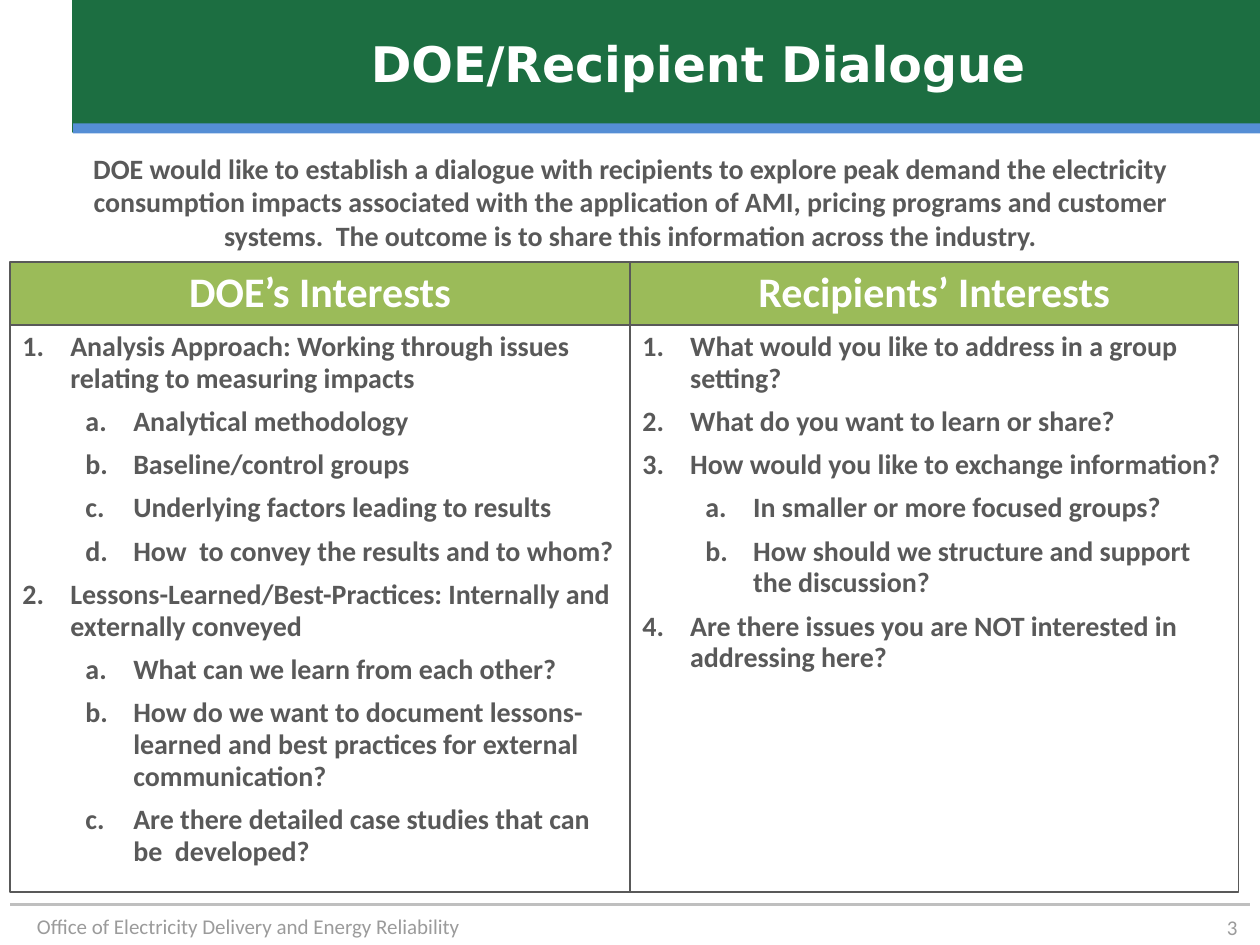
import pptx
import pptx.util
import pptx.dml.color
import pptx.enum.shapes
import pptx.enum.text
import pptx.oxml.ns
import lxml.etree

Inches = pptx.util.Inches
Pt = pptx.util.Pt
ALIGN = pptx.enum.text.PP_ALIGN
ANCHOR = pptx.enum.text.MSO_ANCHOR

GREEN, BLUE, LIME = "1C6E41", "558ED5", "9BBB59"
DARK, GREY, PALE, WHITE = "595959", "9B9B9B", "BFBFBF", "FFFFFF"

INTRO = (
    "DOE would like to establish a dialogue with recipients to explore peak "
    "demand the electricity consumption impacts associated with the "
    "application of AMI, pricing programs and customer systems.  The outcome "
    "is to share this information across the industry."
)

# Each list item is (level, text)
DOE_LIST = [
    (0, "Analysis Approach: Working through issues relating to measuring impacts"),
    (1, "Analytical methodology"),
    (1, "Baseline/control groups"),
    (1, "Underlying factors leading to results"),
    (1, "How  to convey the results and to whom?"),
    (0, "Lessons-Learned/Best-Practices: Internally and externally conveyed"),
    (1, "What can we learn from each other?"),
    (1, "How do we want to document lessons-learned and best practices for "
        "external communication?"),
    (1, "Are there detailed case studies that can be  developed?"),
]
GUEST_LIST = [
    (0, "What would you like to address in a group setting?"),
    (0, "What do you want to learn or share?"),
    (0, "How would you like to exchange information?"),
    (1, "In smaller or more focused groups?"),
    (1, "How should we structure and support the discussion?"),
    (0, "Are there issues you are NOT interested in addressing here?"),
]


def color(code):
    return pptx.dml.color.RGBColor.from_string(code)


def place(shape, left, top, width, height):
    shape.left, shape.top = Inches(left), Inches(top)
    shape.width, shape.height = Inches(width), Inches(height)


def add_run(para, text, size, code, bold=False, face="Calibri"):
    run = para.add_run()
    run.text = text
    run.font.size, run.font.bold, run.font.name = Pt(size), bold, face
    run.font.color.rgb = color(code)


def add_rect(slide, box, fill=None, line=None):
    shape = slide.shapes.add_shape(
        pptx.enum.shapes.MSO_SHAPE.RECTANGLE, *map(Inches, box))
    shape.shadow.inherit = False
    if fill:
        shape.fill.solid()
        shape.fill.fore_color.rgb = color(fill)
    else:
        shape.fill.background()
    if line:
        shape.line.color.rgb = color(line)
        shape.line.width = Pt(1)
    else:
        shape.line.fill.background()
    return shape


def set_frame(shape, anchor):
    frame = shape.text_frame
    frame.word_wrap = True
    frame.auto_size = pptx.enum.text.MSO_AUTO_SIZE.NONE
    frame.vertical_anchor = anchor
    return frame


def add_mark(para, level):
    """Number a paragraph: 1. at the top level, a. below it."""
    props = para._p.get_or_add_pPr()
    props.set("marL", str(Inches(0.38 + 0.5 * level)))
    props.set("indent", str(Inches(-0.38)))
    mark = lxml.etree.SubElement(props, pptx.oxml.ns.qn("a:buAutoNum"))
    mark.set("type", ("arabicPeriod", "alphaLcPeriod")[level])


def add_head(slide, left, width, text):
    shape = add_rect(slide, (left, 2.08, width, 0.5), LIME, DARK)
    frame = set_frame(shape, ANCHOR.MIDDLE)
    frame.margin_top = frame.margin_bottom = 0
    para = frame.paragraphs[0]
    para.alignment, para.line_spacing = ALIGN.CENTER, 0.9
    add_run(para, text, 24, WHITE, True)


def add_list(slide, left, width, items):
    shape = add_rect(slide, (left, 2.58, width, 4.5), line=DARK)
    frame = set_frame(shape, ANCHOR.TOP)
    for num, (level, text) in enumerate(items):
        para = frame.add_paragraph() if num else frame.paragraphs[0]
        para.level, para.alignment = level, ALIGN.LEFT
        para.line_spacing = 0.95
        para.space_before = Pt(6.4 if num else 0)
        add_mark(para, level)
        add_run(para, text, 16, DARK, True)


def add_note(slide, box, text, anchor):
    shape = slide.shapes.add_textbox(*map(Inches, box))
    para = set_frame(shape, anchor).paragraphs[0]
    para.alignment = ALIGN.RIGHT
    add_run(para, text, 12, GREY)


def add_rule(slide, left, right, top):
    line = slide.shapes.add_connector(
        pptx.enum.shapes.MSO_CONNECTOR.STRAIGHT,
        Inches(left), Inches(top), Inches(right), Inches(top))
    line.line.color.rgb = color(PALE)
    line.line.width = Pt(1.75)
    lxml.etree.SubElement(line._element.spPr, pptx.oxml.ns.qn("a:effectLst"))


def fill_title(slide, text):
    title = slide.shapes.title
    slide.shapes._spTree.append(title._element)  # in front of the band
    place(title, 1.08, 0, 8.92, 1)
    para = set_frame(title, ANCHOR.MIDDLE).paragraphs[0]
    para.alignment = ALIGN.CENTER
    add_run(para, text, 28, WHITE, True, "DejaVu Sans")


def fill_body(slide, text):
    body = slide.placeholders[1]
    place(body, 0.36, 1.15, 9.29, 0.87)
    para = set_frame(body, ANCHOR.TOP).paragraphs[0]
    para.alignment, para.space_before = ALIGN.CENTER, Pt(0)
    props = para._p.get_or_add_pPr()
    props.set("marL", "0")
    props.set("indent", "0")
    lxml.etree.SubElement(props, pptx.oxml.ns.qn("a:buNone"))
    add_run(para, text, 16, DARK, True)


def main():
    deck = pptx.Presentation()
    deck.slide_width, deck.slide_height = Inches(10), Inches(7.5)
    slide = deck.slides.add_slide(deck.slide_layouts[1])

    # Title band and introduction
    add_rect(slide, (0.58, 0, 9.42, 1.05), GREEN, GREEN)
    add_rect(slide, (0.58, 0.98, 9.42, 0.08), BLUE)
    fill_title(slide, "DOE/Recipient Dialogue")
    fill_body(slide, INTRO)

    # Two columns of interests
    for left, width, head, items in (
        (0.08, 4.92, "DOE’s Interests", DOE_LIST),
        (5, 4.83, "Recipients’ Interests", GUEST_LIST),
    ):
        add_list(slide, left, width, items)
        add_head(slide, left, width, head)

    # Footer
    add_rule(slide, 0.08, 9.92, 7.18)
    add_note(slide, (0, 7.2, 3.75, 0.3),
             "Office of Electricity Delivery and Energy Reliability", ANCHOR.TOP)
    add_note(slide, (7.42, 7.21, 2.5, 0.29), "3", ANCHOR.MIDDLE)

    deck.save("out.pptx")


if __name__ == "__main__":
    main()
